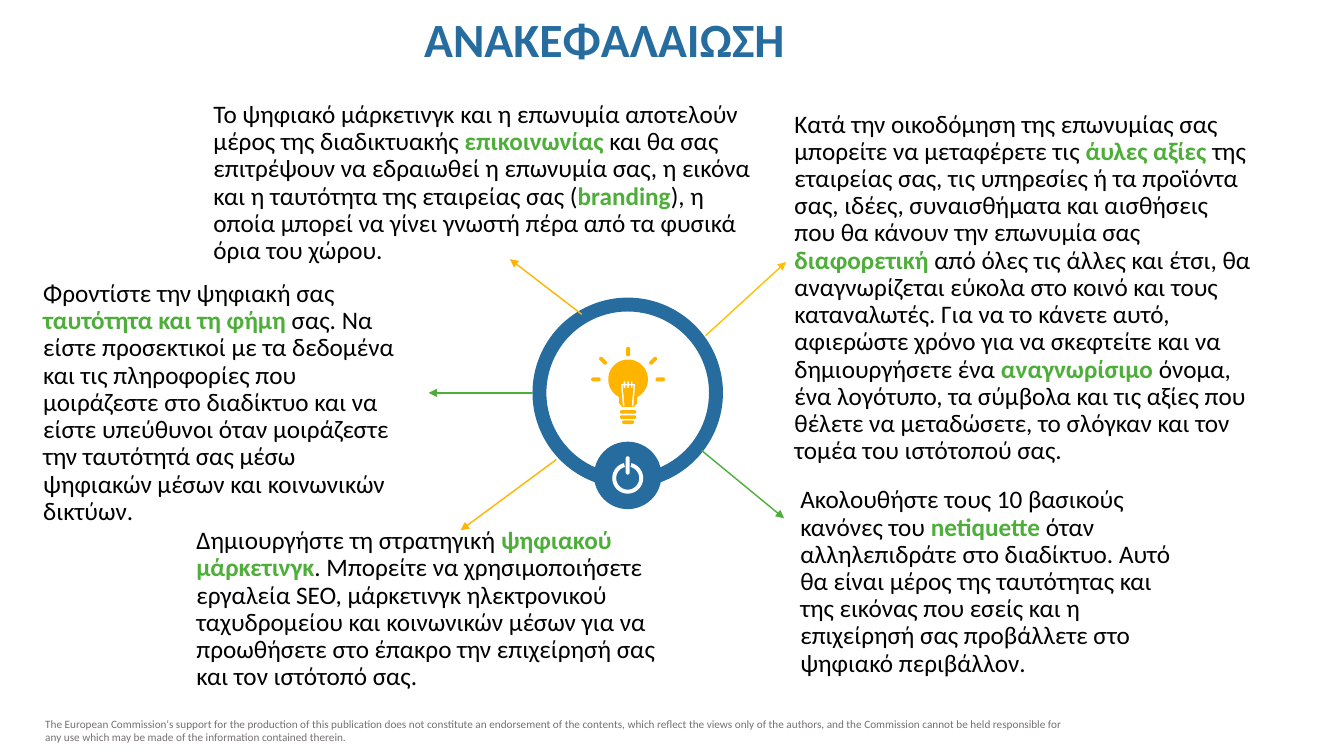
from math import cos, radians, sin

from lxml.etree import SubElement
from pptx import Presentation
from pptx.dml.color import RGBColor
from pptx.enum.shapes import MSO_CONNECTOR, MSO_SHAPE
from pptx.enum.text import MSO_ANCHOR, MSO_AUTO_SIZE
from pptx.oxml.ns import qn
from pptx.util import Cm, Pt

BLUE, GREEN, AMBER, GOLD = "266C9F", "4EAE3A", "FFB500", "FFC000"
BLACK, WHITE, GREY = "000000", "FFFFFF", "767171"

TAKEAWAYS = [
    ((4.7, 13.15, 12.85, 4.42), [
        "Δημιουργήστε τη στρατηγική ", "ψηφιακού μάρκετινγκ",
        ". Μπορείτε να χρησιμοποιήσετε εργαλεία SEO, μάρκετινγκ ηλεκτρονικού "
        "ταχυδρομείου και κοινωνικών μέσων για να προωθήσετε στο έπακρο την "
        "επιχείρησή σας και τον ιστότοπό σας."]),
    ((19.77, 2.63, 12.01, 9.27), [
        "Κατά την οικοδόμηση της επωνυμίας σας μπορείτε να μεταφέρετε τις ",
        "άυλες αξίες ",
        "της εταιρείας σας, τις υπηρεσίες ή τα προϊόντα σας, ιδέες, "
        "συναισθήματα και αισθήσεις που θα κάνουν την επωνυμία σας ",
        "διαφορετική",
        " από όλες τις άλλες και έτσι, θα αναγνωρίζεται εύκολα στο κοινό και "
        "τους καταναλωτές. Για να το κάνετε αυτό, αφιερώστε χρόνο για να "
        "σκεφτείτε και να δημιουργήσετε ένα ",
        "αναγνωρίσιμο",
        " όνομα, ένα λογότυπο, τα σύμβολα και τις αξίες που θέλετε να "
        "μεταδώσετε, το σλόγκαν και τον τομέα του ιστότοπού σας."]),
    ((19.92, 12.12, 9.91, 5.11), [
        "Ακολουθήστε τους 10 βασικούς κανόνες του ", "netiquette",
        " όταν αλληλεπιδράτε στο διαδίκτυο. Αυτό θα είναι μέρος της "
        "ταυτότητας και της εικόνας που εσείς και η επιχείρησή σας "
        "προβάλλετε στο ψηφιακό περιβάλλον."]),
    ((5.13, 2.41, 14.25, 4.42), [
        "Το ψηφιακό μάρκετινγκ και η επωνυμία αποτελούν μέρος της "
        "διαδικτυακής ", "επικοινωνίας",
        " και θα σας επιτρέψουν να εδραιωθεί η επωνυμία σας, η εικόνα και η "
        "ταυτότητα της εταιρείας σας (", "branding",
        "), η οποία μπορεί να γίνει γνωστή πέρα από τα φυσικά όρια του "
        "χώρου."]),
    ((0.84, 6.92, 9.68, 6.48), [
        "Φροντίστε την ψηφιακή σας ", "ταυτότητα και τη φήμη ",
        "σας. Να είστε προσεκτικοί με τα δεδομένα και τις πληροφορίες που "
        "μοιράζεστε στο διαδίκτυο και να είστε υπεύθυνοι όταν μοιράζεστε την "
        "ταυτότητά σας μέσω ψηφιακών μέσων και κοινωνικών δικτύων."]),
]

ARROWS = [
    (13.41, 9.9, 10.8, 9.9, GREEN),
    (17.68, 11.35, 19.76, 13.06, GREEN),
    (14.66, 7.92, 12.85, 6.53, AMBER),
    (17.78, 8.46, 19.81, 6.6, GOLD),
    (14.02, 11.58, 11.61, 13.36, AMBER),
]

FOOTER = ("The European Commission's support for the production of this "
          "publication does not constitute an endorsement of the contents, "
          "which reflect the views only of the authors, and the Commission "
          "cannot be held responsible for any use which may be made of the "
          "information contained therein.")


def rgb(color):
    """Turn a hex string into a colour."""
    return RGBColor.from_string(color)


def add_text(s, box, runs, spacing=1.0, anchor=MSO_ANCHOR.TOP, grow=True):
    """Add a wrapped text box from (text, size, colour, bold) runs."""
    tf = s.shapes.add_textbox(*map(Cm, box)).text_frame
    tf.word_wrap = True
    tf.auto_size = MSO_AUTO_SIZE.SHAPE_TO_FIT_TEXT if grow else MSO_AUTO_SIZE.NONE
    tf.vertical_anchor = anchor
    p = tf.paragraphs[0]
    p.line_spacing = spacing
    for text, size, color, bold in runs:
        r = p.add_run()
        r.text = text
        r.font.name = "Calibri"
        r.font.size = Pt(size)
        r.font.bold = bold
        r.font.color.rgb = rgb(color)


def add_takeaway(s, box, parts):
    """Add a body text in which every second part is highlighted."""
    runs = [(part, 18, GREEN if i % 2 else BLACK, bool(i % 2))
            for i, part in enumerate(parts)]
    add_text(s, box, runs, 0.9, MSO_ANCHOR.MIDDLE)


def paint(sp, color):
    """Give a shape a flat fill without line or shadow."""
    sp.shadow.inherit = False
    sp.fill.solid()
    sp.fill.fore_color.rgb = rgb(color)
    sp.line.fill.background()


def add_round(s, kind, cx, cy, d, color):
    """Add a round preset shape around a centre point."""
    sp = s.shapes.add_shape(kind, Cm(cx - d / 2), Cm(cy - d / 2), Cm(d), Cm(d))
    paint(sp, color)
    return sp


def add_outline(s, cx, cy, contours, color):
    """Add one freeform made of closed contours around a centre point."""
    contours = [[(Cm(cx + x), Cm(cy + y)) for x, y in c] for c in contours]
    fb = s.shapes.build_freeform(*contours[0][0])
    for i, contour in enumerate(contours):
        if i:
            fb.move_to(*contour[0])
        fb.add_line_segments(contour[1:], close=True)
    paint(fb.convert_to_shape(), color)


def arc(cx, cy, radius, start, end, steps=12):
    """Return points on a circle between two angles in degrees."""
    angles = [radians(start + (end - start) * i / steps) for i in range(steps + 1)]
    return [(cx + radius * cos(a), cy + radius * sin(a)) for a in angles]


def pill(cx, cy, length, thickness, angle=0):
    """Return the contour of a bar with round ends."""
    half = (length - thickness) / 2
    dx, dy = half * cos(radians(angle)), half * sin(radians(angle))
    return (arc(cx + dx, cy + dy, thickness / 2, angle - 90, angle + 90)
            + arc(cx - dx, cy - dy, thickness / 2, angle + 90, angle + 270))


def filament():
    """Return the contour of the filament left open in the bulb."""
    teeth = (-0.09, 0, 0.09)
    top, bottom = [], []
    for x in teeth:
        top += [(x - 0.02, 0.11), (x - 0.02, 0.05), (x + 0.02, 0.05), (x + 0.02, 0.11)]
    for x in reversed(teeth):
        bottom += [(x + 0.02, 0.15), (x + 0.02, 0.22), (x - 0.02, 0.22), (x - 0.02, 0.15)]
    right = [(0.18, 0.11), (0.13, 0.69), (0.09, 0.66), (0.14, 0.15)]
    left = [(-x, y) for x, y in reversed(right)]
    return top + right + bottom + left


def add_bulb(s, cx, cy):
    """Draw the light bulb with its rays, filament and screw base."""
    socket = [(0.23, 0.6), (0.15, 0.69), (-0.15, 0.69), (-0.23, 0.6)]
    head = arc(0, 0, 0.5, 117, 423, 48) + socket
    rays = [pill(x, y, 0.24, 0.1, angle) for x, y, angle in [
        (-0.81, 0, 0), (-0.63, -0.47, 45), (0, -0.7, 90),
        (0.63, -0.47, 135), (0.81, 0, 0)]]
    base = [pill(0, 0.82 + 0.13 * i, width, 0.09)
            for i, width in enumerate([0.41, 0.41, 0.3])]
    add_outline(s, cx, cy, [head, filament(), *rays, *base], AMBER)


def add_power_button(s, cx, cy):
    """Draw the round button with the power symbol."""
    add_round(s, MSO_SHAPE.OVAL, cx, cy, 1.7, BLUE)
    ring = arc(0, 0.07, 0.39, -76, 256, 48) + arc(0, 0.07, 0.29, 256, -76, 48)
    add_outline(s, cx, cy, [ring, pill(0, -0.25, 0.46, 0.1, 90)], WHITE)


def add_arrow(s, x1, y1, x2, y2, color):
    """Add a straight line with an arrowhead at its end."""
    line = s.shapes.add_connector(MSO_CONNECTOR.STRAIGHT, Cm(x1), Cm(y1), Cm(x2), Cm(y2))
    line.line.color.rgb = rgb(color)
    line.line.width = Pt(1)
    SubElement(line.line._get_or_add_ln(), qn("a:tailEnd"), type="triangle")
    SubElement(line._element.spPr, qn("a:effectLst"))


def main():
    """Build the summary slide."""
    prs = Presentation()
    prs.slide_width, prs.slide_height = Cm(33.87), Cm(19.05)
    s = prs.slides.add_slide(prs.slide_layouts[6])
    add_text(s, (0.89, 17.94, 26.57, 0.94), [(FOOTER, 8, GREY, False)])
    add_text(s, (10.44, 0.51, 9.65, 2.01),
             [("ΑΝΑΚΕΦΑΛΑΙΩΣΗ", 34.1, BLUE, True)], 0.7, grow=False)
    add_round(s, MSO_SHAPE.DONUT, 15.82, 9.9, 4.8, BLUE).adjustments[0] = 0.073
    add_power_button(s, 15.82, 11.98)
    add_bulb(s, 15.83, 9.56)
    for arrow in ARROWS:
        add_arrow(s, *arrow)
    for box, parts in TAKEAWAYS:
        add_takeaway(s, box, parts)
    prs.save("out.pptx")


if __name__ == "__main__":
    main()
